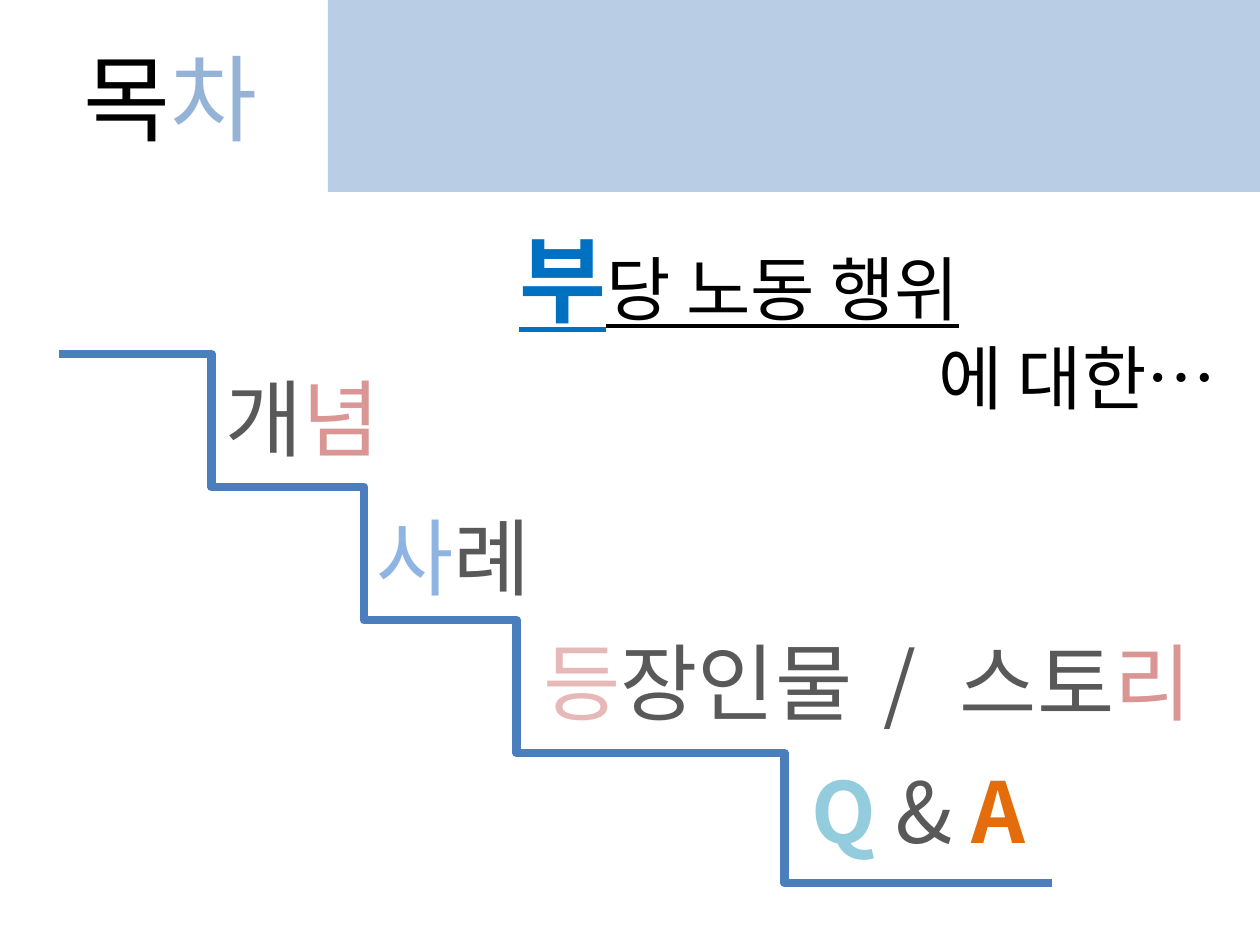
from lxml.etree import SubElement
from pptx import Presentation
from pptx.dml.color import RGBColor
from pptx.enum.shapes import MSO_CONNECTOR, MSO_SHAPE
from pptx.enum.text import MSO_ANCHOR, MSO_AUTO_SIZE, PP_ALIGN
from pptx.oxml.ns import qn
from pptx.util import Pt

EMU_PER_INCH = 914400
PX_PER_INCH = 126
FONT = "Noto Sans CJK KR"
BLACK, GREY, ROSE = "000000", "595959", "D99694"


def px(length):
    return round(length * EMU_PER_INCH / PX_PER_INCH)


def paint(color_format, hex_color):
    color_format.rgb = RGBColor.from_string(hex_color)


def add_text(paragraph, text, size=48, color=GREY, bold=False, underline=False, spacing=0):
    run = paragraph.add_run()
    run.text = text
    run.font.name = FONT
    run.font.size = Pt(size)
    run.font.bold = bold
    run.font.underline = underline
    paint(run.font.color, color)
    properties = run.font._element
    SubElement(properties, qn("a:ea")).set("typeface", FONT)
    if spacing:
        properties.set("spc", str(spacing * 100))


def prepare_frame(frame, align, anchor, wrap=True, grow=False):
    frame.word_wrap = wrap
    frame.auto_size = MSO_AUTO_SIZE.SHAPE_TO_FIT_TEXT if grow else MSO_AUTO_SIZE.NONE
    frame.vertical_anchor = anchor
    paragraph = frame.paragraphs[0]
    paragraph.alignment = align
    return paragraph


def add_label(slide, box, parts, centred=False, wrap=True):
    frame = slide.shapes.add_textbox(*map(px, box)).text_frame
    align = PP_ALIGN.CENTER if centred else PP_ALIGN.LEFT
    anchor = MSO_ANCHOR.MIDDLE if centred else MSO_ANCHOR.TOP
    paragraph = prepare_frame(frame, align, anchor, wrap, grow=not centred)
    for text, style in parts:
        add_text(paragraph, text, **style)
    return frame


def add_heading(slide):
    heading = slide.shapes.title
    heading.left, heading.top, heading.width, heading.height = map(px, (49, 18, 260, 157))
    paragraph = prepare_frame(heading.text_frame, PP_ALIGN.CENTER, MSO_ANCHOR.MIDDLE)
    add_text(paragraph, "목", size=54, color=BLACK)
    add_text(paragraph, "차", size=54, color="95B3D7")
    add_text(paragraph, " ", size=44, color=BLACK)


def add_banner(slide):
    banner = slide.shapes.add_shape(MSO_SHAPE.RECTANGLE, *map(px, (328, 0, 932, 192)))
    banner.shadow.inherit = False
    banner.fill.solid()
    paint(banner.fill.fore_color, "B9CDE5")
    banner.line.fill.background()


def add_step(slide, left, top, right, bottom):
    step = slide.shapes.add_connector(MSO_CONNECTOR.ELBOW, *map(px, (left, top, right, bottom)))
    paint(step.line.color, "4B7EBC")
    step.line.width = Pt(5)
    SubElement(step._element.spPr, qn("a:effectLst"))


def add_staircase(slide):
    tread, rise = 152.5, 133
    for level in range(3):
        left, top = 59 + level * tread, 354 + level * rise
        add_step(slide, left, top, left + 2 * tread, top + rise)
    add_step(slide, 517, 753, 1052, 883)


def add_topic(slide):
    topic = add_label(slide, (507, 215, 722, 212), [
        ("부", dict(size=54, color="0070C0", bold=True, underline=True)),
        ("당 노동 행위", dict(size=40, color=BLACK, underline=True)),
    ])
    ending = topic.add_paragraph()
    ending.alignment = PP_ALIGN.RIGHT
    add_text(ending, "에 대한…", size=40, color=BLACK)


def add_contents(slide):
    add_label(slide, (213, 360, 218, 115), [("개", {}), ("념", dict(color=ROSE))])
    add_label(slide, (350, 483, 224, 146), [
        ("사", dict(color="8EB4E3")),
        ("례", {}),
        (" ", dict(size=44, color=BLACK)),
    ], centred=True)
    add_label(slide, (471, 575, 809, 212), [
        ("등", dict(color="E6B9B8")),
        ("장인물", {}),
        (" / ", dict(spacing=7)),
        ("스토", {}),
        ("리", dict(color=ROSE)),
        (" ", dict(size=40, color=BLACK)),
    ], centred=True)
    add_label(slide, (799, 753, 280, 115), [
        ("Q ", dict(color="93CDDD", bold=True)),
        ("& ", {}),
        ("A", dict(color="E46C0A", bold=True)),
    ], wrap=False)


def main():
    presentation = Presentation()
    presentation.slide_width = px(1260)
    presentation.slide_height = px(945)
    slide = presentation.slides.add_slide(presentation.slide_layouts[5])
    add_heading(slide)
    add_banner(slide)
    add_staircase(slide)
    add_contents(slide)
    add_topic(slide)
    presentation.save("out.pptx")


if __name__ == "__main__":
    main()
